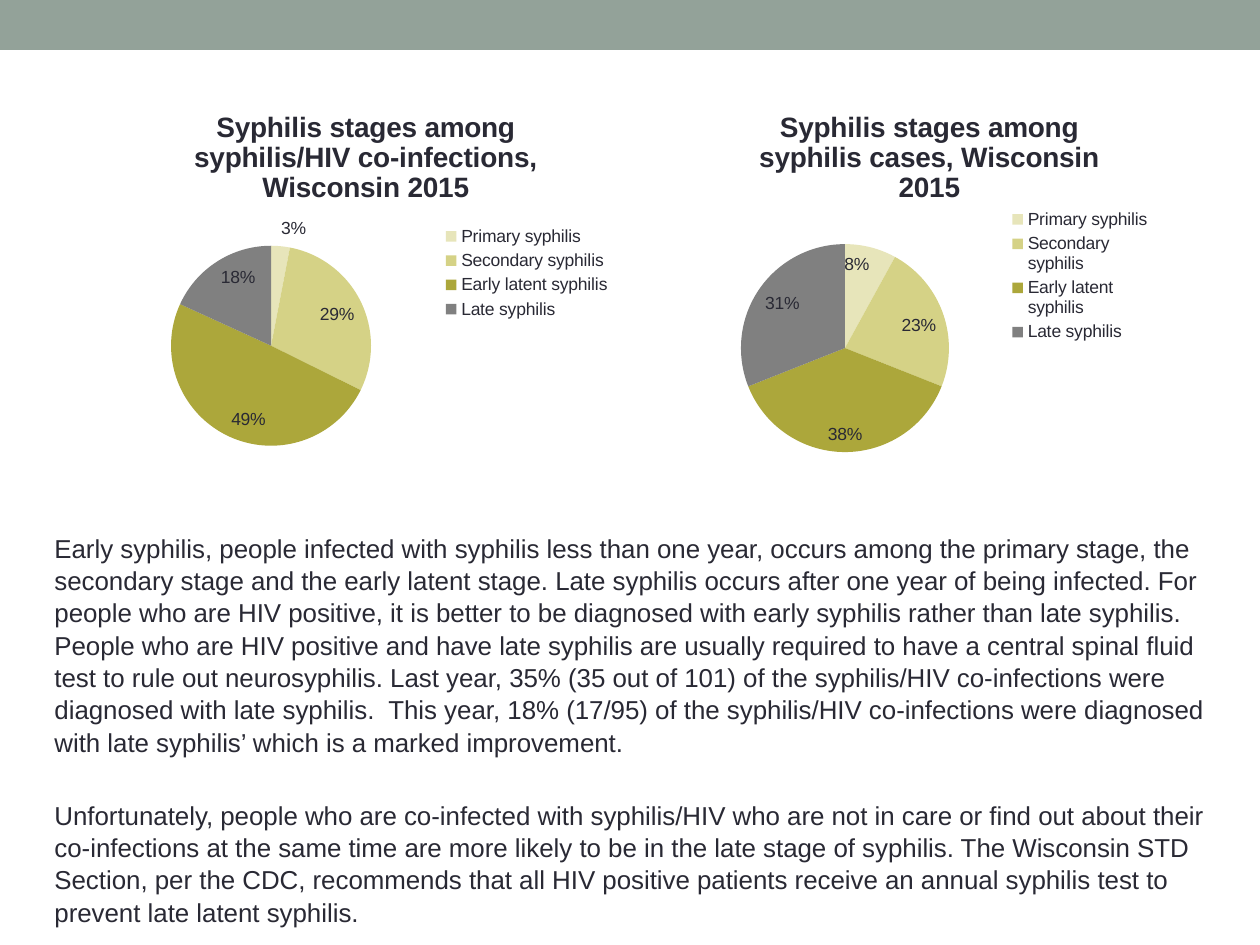
from pptx import Presentation
from pptx.chart.data import CategoryChartData as Data
from pptx.dml.color import RGBColor as RGB
from pptx.enum.chart import XL_CHART_TYPE as Kind
from pptx.enum.chart import XL_LABEL_POSITION as Spot
from pptx.enum.chart import XL_LEGEND_POSITION as Side
from pptx.enum.shapes import MSO_SHAPE as Form
from pptx.oxml import parse_xml
from pptx.oxml.ns import nsdecls, qn
from pptx.util import Emu, Pt

PX = 914400 / 126
COLORS = {
    "ink": "292934",
    "band": "93A299",
    "primary": "E7E5BA",
    "second": "D5D286",
    "early": "ACA73B",
    "late": "808080",
}
STAGES = {
    "Primary syphilis": "primary",
    "Secondary syphilis": "second",
    "Early latent syphilis": "early",
    "Late syphilis": "late",
}
NOTES = [
    "Early syphilis, people infected with syphilis less than one year, occurs among the primary "
    "stage, the secondary stage and the early latent stage. Late syphilis occurs after one year of "
    "being infected. For people who are HIV positive, it is better to be diagnosed with early "
    "syphilis rather than late syphilis. People who are HIV positive and have late syphilis are "
    "usually required to have a central spinal fluid test to rule out neurosyphilis. Last year, 35% "
    "(35 out of 101) of the syphilis/HIV co-infections were diagnosed with late syphilis.  This "
    "year, 18% (17/95) of the syphilis/HIV co-infections were diagnosed with late syphilis’ which "
    "is a marked improvement.",
    "Unfortunately, people who are co-infected with syphilis/HIV who are not in care or find out "
    "about their co-infections at the same time are more likely to be in the late stage of "
    "syphilis. The Wisconsin STD Section, per the CDC, recommends that all HIV positive patients "
    "receive an annual syphilis test to prevent late latent syphilis.",
]


def px(*vals):
    return [Emu(round(v * PX)) for v in vals]


def place(part, box, frame, inner=False):
    """Pin a chart part to a px box on the slide; a box of two gives only its corner."""
    left, top, wide, high = frame
    parts = [(box[0] - left) / wide, (box[1] - top) / high]
    if len(box) == 4:
        parts += [box[2] / wide, box[3] / high]
    tags = '<c:layoutTarget val="inner"/>' if inner else ""
    tags += '<c:xMode val="edge"/><c:yMode val="edge"/>'
    tags += "".join(f'<c:{k} val="{v:.3f}"/>' for k, v in zip("xywh", parts))
    old = part.find(qn("c:layout"))
    if old is not None:
        part.remove(old)
    new = parse_xml(f'<c:layout {nsdecls("c")}><c:manualLayout>{tags}</c:manualLayout></c:layout>')
    over = part.find(qn("c:overlay"))
    part.insert(0 if over is None else part.index(over), new)


class Deck:
    """The style and the current slide."""

    def __init__(self, wide, high):
        self.file = Presentation()
        self.file.slide_width, self.file.slide_height = px(wide, high)
        self.slide = self.file.slides.add_slide(self.file.slide_layouts[6])
        self.shapes = self.slide.shapes

    def font(self, font, size, bold=False):
        font.name, font.size, font.bold = "Arial", Pt(size), bold
        font.color.rgb = RGB.from_string(COLORS["ink"])

    def fill(self, part, key):
        part.fill.solid()
        part.fill.fore_color.rgb = RGB.from_string(COLORS[key])

    def band(self, box, key):
        bar = self.shapes.add_shape(Form.RECTANGLE, *px(*box))
        bar.shadow.inherit = False
        bar.line.fill.background()
        self.fill(bar, key)

    def text(self, box, paras, size, gap):
        frame = self.shapes.add_textbox(*px(*box)).text_frame
        frame.word_wrap = True
        for i, words in enumerate(paras):
            para = frame.add_paragraph() if i else frame.paragraphs[0]
            para.text = words
            para.line_spacing = 1.04
            para.space_before = Pt(gap if i else 0)
            self.font(para.runs[0].font, size)

    def pie(self, box, title, vals, head, disc, key, outer=()):
        """Add a pie; the points listed in outer have their labels outside."""
        data = Data()
        data.categories = list(STAGES)
        data.add_series("Series 1", vals)
        chart = self.shapes.add_chart(Kind.PIE, *px(*box), data).chart
        self.font(chart.font, 10)

        chart.has_title = True
        frame = chart.chart_title.text_frame
        frame.text = title
        self.font(frame.paragraphs[0].runs[0].font, 16, True)
        place(chart.chart_title._element, head, box)

        chart.has_legend = True
        chart.legend.position = Side.RIGHT
        chart.legend.include_in_layout = False
        place(chart.legend._element, key, box)
        place(chart.element.xpath(".//c:plotArea")[0], disc, box, inner=True)

        row = chart.plots[0].series[0]
        for i, tone in enumerate(STAGES.values()):
            self.fill(row.points[i].format, tone)
        tags = row.data_labels
        tags.show_value, tags.show_percentage = False, True
        tags.number_format, tags.number_format_is_linked = "0%", False
        tags.position = Spot.INSIDE_END
        self.font(tags.font, 10)
        for i in outer:
            tag = row.points[i].data_label
            tag.position = Spot.OUTSIDE_END
            self.font(tag.font, 10)
        for tag in chart.element.xpath(".//c:dLbl"):
            tag.find(qn("c:showVal")).set("val", "0")
            tag.find(qn("c:showPercent")).set("val", "1")


def main():
    deck = Deck(1260, 945)
    deck.band((0, 0, 1260, 50), "band")
    deck.text((42, 525, 1176, 368), NOTES, 14.8, 23.4)
    deck.pie((95, 84, 532, 379), "Syphilis stages among syphilis/HIV co-infections, Wisconsin 2015",
             (3, 29, 49, 18), head=(189, 104), disc=(171, 246, 200, 200),
             key=(432, 222, 190, 102), outer=[0])
    deck.pie((683, 84, 491, 386), "Syphilis stages among syphilis cases, Wisconsin 2015",
             (8, 23, 38, 31), head=(754, 104), disc=(741, 244, 208, 208),
             key=(1006, 205, 148, 142))
    deck.file.save("out.pptx")


if __name__ == "__main__":
    main()
